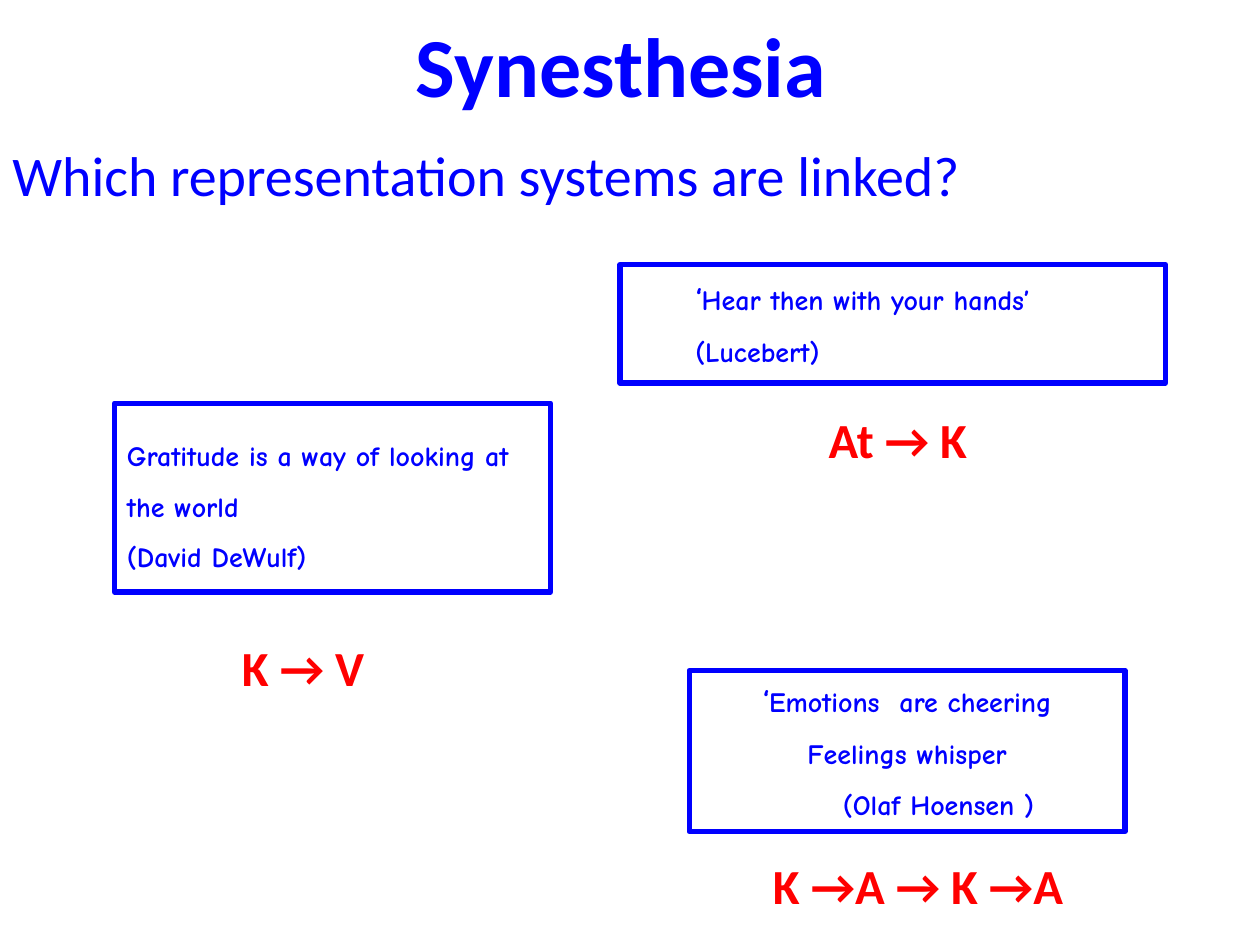
from pptx import Presentation
from pptx.dml.color import RGBColor
from pptx.enum.shapes import MSO_SHAPE
from pptx.enum.text import MSO_ANCHOR, PP_ALIGN
from pptx.util import Pt

PX = 9144  # 100 px to the inch
COLORS = {"blue": "0000FF", "red": "FF0000", "white": "FFFFFF"}
LEFT, CENTER = PP_ALIGN.LEFT, PP_ALIGN.CENTER


def color(name):
    return RGBColor.from_string(COLORS[name])


def add_text(paragraph, text, font_color, **font_format):
    run = paragraph.add_run()
    run.text = text
    run.font.color.rgb = color(font_color)
    for name, value in font_format.items():
        setattr(run.font, name, value)


presentation = Presentation()
presentation.slide_width, presentation.slide_height = 1000 * PX, 750 * PX
slide = presentation.slides.add_slide(presentation.slide_layouts[5])

# Title
title = slide.shapes.title
title.left, title.top, title.width, title.height = (n * PX for n in (43, 0, 900, 101))
title.text_frame.vertical_anchor = MSO_ANCHOR.MIDDLE
title.text_frame.paragraphs[0].alignment = CENTER
add_text(title.text_frame.paragraphs[0], "Synesthesia", "blue",
         name="Calibri", size=Pt(48), bold=True)

# Framed quotes: box, paragraph format, lines as (text, level)
spaced = {"space_after": Pt(10)}
quotes = [
    ((492, 210, 433, 94), {"alignment": LEFT, **spaced},
     [("‘Hear then with your hands’", 1), ("(Lucebert)", 1)]),
    ((91, 320, 346, 150), {"alignment": LEFT, "line_spacing": 1.5},
     [("Gratitude is a way of looking at the world", 0), ("(David DeWulf)", 0)]),
    ((547, 532, 346, 128), {"alignment": CENTER, **spaced},
     [("‘Emotions  are cheering", 0), ("Feelings whisper", 0), ("(Olaf Hoensen )", 1)]),
]
for box, paragraph_format, lines in quotes:
    shape = slide.shapes.add_shape(MSO_SHAPE.RECTANGLE, *(n * PX for n in box))
    shape.shadow.inherit = False
    shape.fill.solid()
    shape.fill.fore_color.rgb = color("white")
    shape.line.color.rgb = color("blue")
    shape.line.width = Pt(3)
    frame = shape.text_frame
    frame.word_wrap = True
    frame.vertical_anchor = MSO_ANCHOR.MIDDLE
    for index, (text, level) in enumerate(lines):
        paragraph = frame.add_paragraph() if index else frame.paragraphs[0]
        for name, value in {**paragraph_format, "level": level}.items():
            setattr(paragraph, name, value)
        # The opening quotation mark is larger than the words
        if text.startswith("‘"):
            add_text(paragraph, "‘", "blue", name="Comic Neue", size=Pt(18), bold=True)
        add_text(paragraph, text.lstrip("‘"), "blue",
                 name="Comic Neue", size=Pt(16), bold=True)

# Question and the linked systems
labels = [
    ((0, 107, 783, 64), "Which representation systems are linked?", LEFT, "blue", 32, False),
    ((618, 320, 189, 57), "At → K", CENTER, "red", 28, True),
    ((146, 501, 189, 57), "K → V", CENTER, "red", 28, True),
    ((587, 674, 283, 57), "K →A → K →A", CENTER, "red", 28, True),
]
for box, text, alignment, font_color, size, bold in labels:
    label = slide.shapes.add_textbox(*(n * PX for n in box))
    label.text_frame.word_wrap = True
    paragraph = label.text_frame.paragraphs[0]
    paragraph.alignment = alignment
    add_text(paragraph, text, font_color, name="Calibri", size=Pt(size), bold=bold)

presentation.save("out.pptx")
